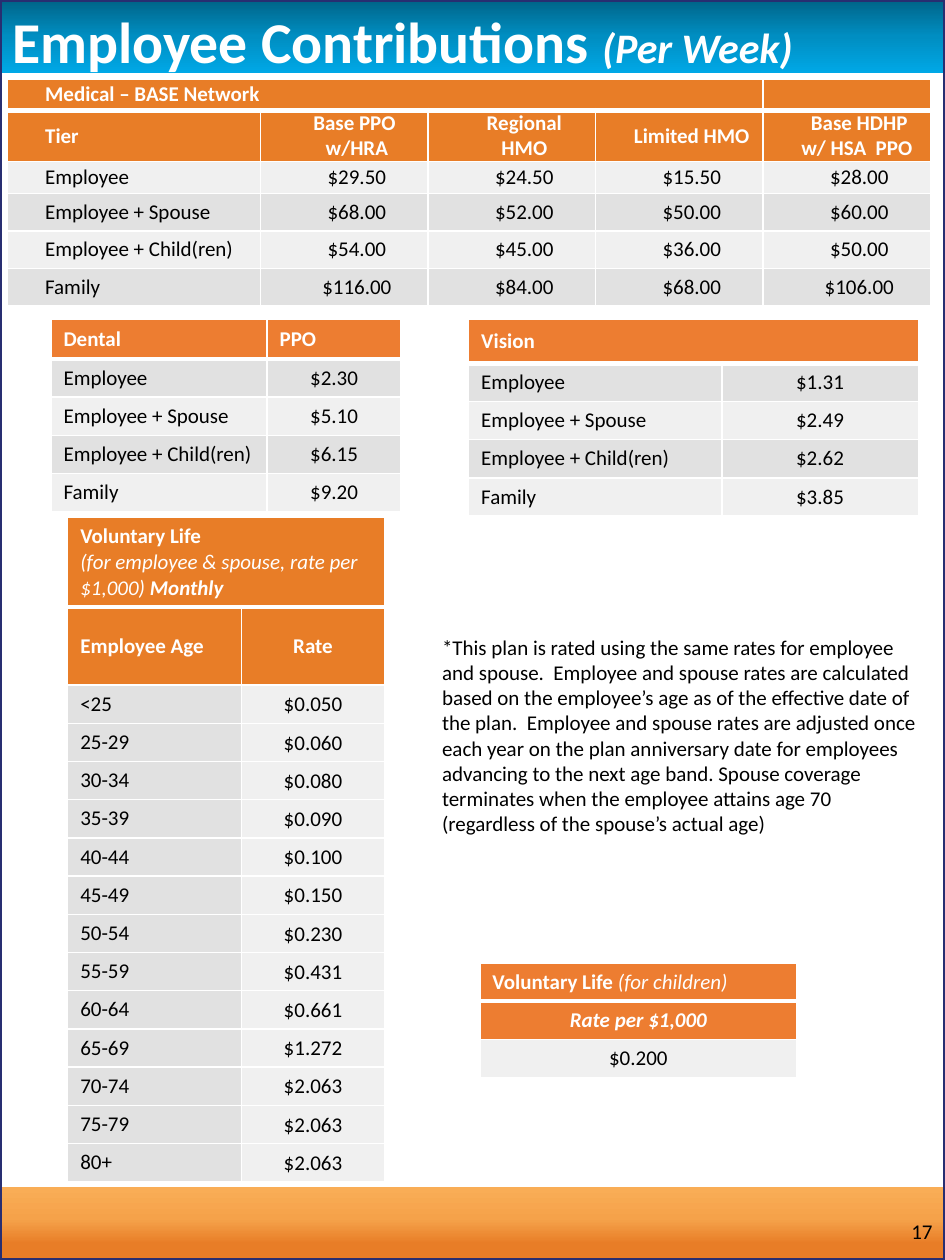
from lxml.etree import SubElement
from pptx import Presentation
from pptx.dml.color import RGBColor
from pptx.enum.shapes import MSO_SHAPE
from pptx.enum.text import MSO_ANCHOR, PP_ALIGN
from pptx.oxml.ns import qn
from pptx.util import Pt

PAGE_WIDTH, PAGE_HEIGHT = 540, 720
FONT = "Calibri"
WHITE = RGBColor(0xFF, 0xFF, 0xFF)
BLACK = RGBColor(0, 0, 0)
NAVY = RGBColor(0x28, 0x2E, 0x71)
DARK_ORANGE = RGBColor(0xE8, 0x7D, 0x27)
ORANGE = RGBColor(0xED, 0x7D, 0x31)
GREY = RGBColor(0xE1, 0xE1, 0xE1)
PALE_GREY = RGBColor(0xF0, 0xF0, 0xF0)
HEADER_STOPS = [(0, RGBColor(0x00, 0x64, 0x88)), (50, RGBColor(0x00, 0x8E, 0xC2)),
                (100, RGBColor(0x00, 0xA8, 0xE6))]
FOOTER_STOPS = [(1, RGBColor(0xF9, 0xAD, 0x56)), (44, RGBColor(0xF5, 0xA2, 0x4A)),
                (78, DARK_ORANGE)]
TIERS = ["Employee", "Employee + Spouse", "Employee + Child(ren)", "Family"]
LINE_ROW = 21.85  # one 12 pt line plus the default cell margins


def style(run, color, size=12, bold=False, italic=False):
    font = run.font
    font.name, font.size, font.bold, font.italic = FONT, Pt(size), bold, italic
    font.color.rgb = color


def add_rectangle(slide, box):
    rectangle = slide.shapes.add_shape(MSO_SHAPE.RECTANGLE, *map(Pt, box))
    rectangle.shadow.inherit = False
    return rectangle


def add_band(slide, box, stops):
    """Band with a gradient running from top to bottom."""
    band = add_rectangle(slide, box)
    band.line.fill.background()
    band.fill.gradient()
    band.fill.gradient_angle = 270
    stop_list = band._element.spPr.find(".//" + qn("a:gsLst"))
    stop_list.clear()
    for percent, color in stops:
        stop = SubElement(stop_list, qn("a:gs"), pos=str(percent * 1000))
        SubElement(stop, qn("a:srgbClr"), val=str(color))


def add_frame(slide, box):
    border = add_rectangle(slide, box)
    border.fill.background()
    border.line.color.rgb = NAVY
    border.line.width = Pt(2.5)


def add_text(slide, box, text, align=PP_ALIGN.LEFT):
    text_frame = slide.shapes.add_textbox(*map(Pt, box)).text_frame
    text_frame.word_wrap = True
    paragraph = text_frame.paragraphs[0]
    paragraph.text = text
    paragraph.alignment = align
    for run in paragraph.runs:
        style(run, BLACK)
    return text_frame


def add_title(slide, box):
    title = add_text(slide, box, "").paragraphs[0]
    title.line_spacing = 0.9
    for text, size, italic in [("Employee Contributions ", 33, False),
                               ("(Per Week)", 24, True)]:
        run = title.add_run()
        run.text = text
        style(run, WHITE, size, True, italic)


def fill_cell(cell, content, color, bold, align):
    """Content is a string, or paragraphs of (text, bold, italic) runs."""
    cell.vertical_anchor = MSO_ANCHOR.MIDDLE
    text_frame = cell.text_frame
    paragraphs = [[(content, bold, False)]] if isinstance(content, str) else content
    for number, pieces in enumerate(paragraphs):
        paragraph = text_frame.add_paragraph() if number else text_frame.paragraphs[0]
        paragraph.alignment = align
        paragraph._p.get_or_add_endParaRPr().set("sz", "1200")
        for text, is_bold, is_italic in pieces:
            if text:
                run = paragraph.add_run()
                run.text = text
                style(run, color, 12, is_bold, is_italic)


def underline_cell(cell):
    """White 3 pt rule below a cell; borders come before the fill."""
    properties = cell._tc.get_or_add_tcPr()
    rule = SubElement(properties, qn("a:lnB"), w=str(Pt(3)))
    SubElement(SubElement(rule, qn("a:solidFill")), qn("a:srgbClr"), val=str(WHITE))
    properties.insert(0, rule)


def add_rate_table(slide, box, widths, heights, rows, shade, header_fill=ORANGE,
                   header_rows=1, label_columns=1, title_span=1):
    """Table with heading rows; shade(row, column) gives the fill of a body cell."""
    frame = slide.shapes.add_table(len(rows), len(widths), *map(Pt, box))
    table = frame.table
    for column, width in zip(table.columns, widths):
        column.width = Pt(width)
    for row, height in zip(table.rows, heights):
        row.height = Pt(height)
    for r, row in enumerate(rows):
        for c, content in enumerate(row):
            cell = table.cell(r, c)
            heading = r < header_rows
            centred = r > 0 and c >= label_columns
            fill_cell(cell, content, WHITE if heading else BLACK, heading,
                      PP_ALIGN.CENTER if centred else PP_ALIGN.LEFT)
            cell.fill.solid()
            cell.fill.fore_color.rgb = (header_fill if heading
                                        else shade(r - header_rows, c))
            if r == 0:
                underline_cell(cell)
    if title_span > 1:
        table.cell(0, 0).merge(table.cell(0, title_span - 1))
    return table


def grey_first(row, column):
    return PALE_GREY if row % 2 else GREY


def pale_first(row, column):
    return GREY if row % 2 else PALE_GREY


def add_medical(slide, box):
    rates = [["$29.50", "$24.50", "$15.50", "$28.00"],
             ["$68.00", "$52.00", "$50.00", "$60.00"],
             ["$54.00", "$45.00", "$36.00", "$50.00"],
             ["$116.00", "$84.00", "$68.00", "$106.00"]]
    rows = [["Medical – BASE Network", "", "", "", ""],
            ["Tier", "Base PPO  w/HRA", "Regional HMO", "Limited HMO",
             "Base HDHP w/ HSA  PPO "]]
    rows += [[tier, *tier_rates] for tier, tier_rates in zip(TIERS, rates)]
    table = add_rate_table(slide, box, [144.7] + [95.7] * 4,
                           [18, 29.3, 18.4] + [21.4] * 3, rows, pale_first,
                           DARK_ORANGE, header_rows=2, title_span=4)
    for cell in table.iter_cells():
        cell.margin_left, cell.margin_right = Pt(21.6), Pt(7.2)
        cell.margin_top = cell.margin_bottom = 0


def add_dental(slide, box):
    rates = ["$2.30", "$5.10", "$6.15", "$9.20"]
    add_rate_table(slide, box, [123.5, 76.7], [22.7] + [LINE_ROW] * 4,
                   [["Dental", "PPO"], *zip(TIERS, rates)], grey_first)


def add_vision(slide, box):
    rates = ["$1.31", "$2.49", "$2.62", "$3.85"]
    add_rate_table(slide, box, [144.7, 112.3], [25.2] + [LINE_ROW] * 4,
                   [["Vision", ""], *zip(TIERS, rates)], grey_first, title_span=2)


def add_voluntary_life(slide, box):
    ages = ["<25", *(f"{age}-{age + 4}" for age in range(25, 80, 5)), "80+"]
    rates = ["$0.050", "$0.060", "$0.080", "$0.090", "$0.100", "$0.150", "$0.230",
             "$0.431", "$0.661", "$1.272", "$2.063", "$2.063", "$2.063"]
    heading = [[("Voluntary Life", True, False)],
               [("(for employee & spouse, rate per $1,000) ", False, True),
                ("Monthly", True, True)]]
    table = add_rate_table(slide, box, [99.2, 82], [51.2, 44.6] + [LINE_ROW] * 13,
                           [[heading, ""], ["Employee Age", "Rate"], *zip(ages, rates)],
                           lambda row, column: PALE_GREY if column else GREY,
                           DARK_ORANGE, header_rows=2, title_span=2)
    for r in range(2, len(table.rows)):
        rate = table.cell(r, 1)
        rate.margin_left = rate.margin_right = rate.margin_top = Pt(0.7)
        rate.margin_bottom = 0


def add_child_life(slide, box):
    heading = [[("Voluntary Life ", True, False), ("(for children)", False, True)]]
    rows = [[heading], [[[("Rate per $1,000", True, True)]]], ["$0.200"]]
    add_rate_table(slide, box, [181.2], [LINE_ROW] * 3, rows, pale_first,
                   header_rows=2, label_columns=0)


def main():
    deck = Presentation()
    deck.slide_width, deck.slide_height = Pt(PAGE_WIDTH), Pt(PAGE_HEIGHT)
    slide = deck.slides.add_slide(deck.slide_layouts[6])
    # Page bands, frame and title
    add_band(slide, (0, 678.2, PAGE_WIDTH, 41.8), FOOTER_STOPS)
    add_band(slide, (0, 0, PAGE_WIDTH, 41.8), HEADER_STOPS)
    add_frame(slide, (0, 0, PAGE_WIDTH, PAGE_HEIGHT))
    add_title(slide, (0, 4.5, PAGE_WIDTH, 60))
    # Rate tables
    add_medical(slide, (4.2, 45, 527.5, 129.9))
    add_dental(slide, (29.1, 182.4, 200.2, 110.1))
    add_vision(slide, (267.8, 182.4, 257, 112.6))
    add_voluntary_life(slide, (38.7, 295.7, 181.2, 379.85))
    add_child_life(slide, (274.2, 550.2, 181.2, 65.55))
    # Rating note and page number
    add_text(slide, (245.5, 358.9, 286, 124),
             "*This plan is rated using the same rates for employee and spouse.  "
             "Employee and spouse rates are calculated based on the employee’s age as "
             "of the effective date of the plan.  Employee and spouse rates are "
             "adjusted once each year on the plan anniversary date for employees "
             "advancing to the next age band. Spouse coverage terminates when the "
             "employee attains age 70 (regardless of the spouse’s actual age)")
    add_text(slide, (418.3, 692.6, 121.7, 24), "17", PP_ALIGN.RIGHT)
    deck.save("out.pptx")


if __name__ == "__main__":
    main()
